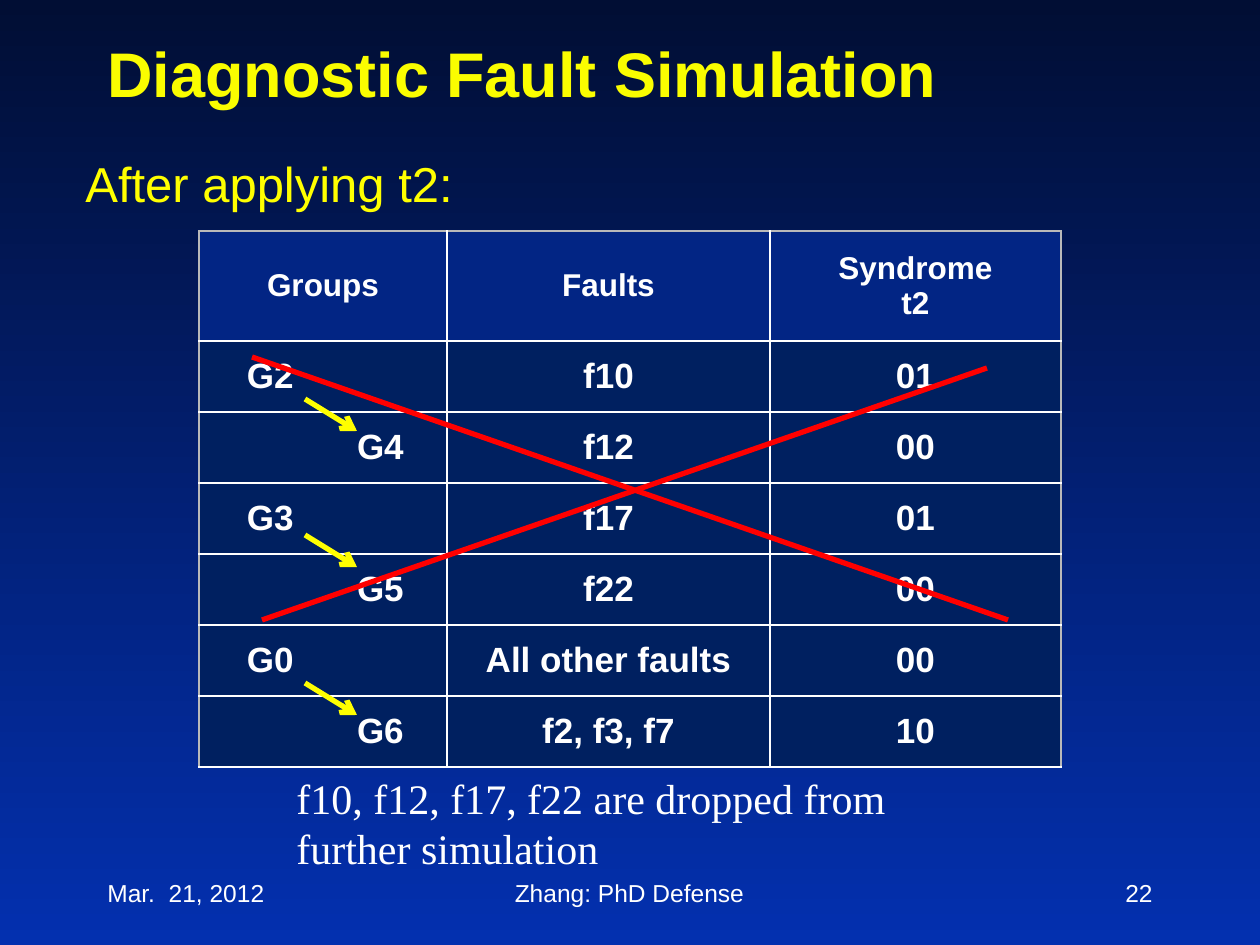
from lxml.etree import SubElement
from pptx import Presentation
from pptx.dml.color import RGBColor
from pptx.enum.shapes import MSO_CONNECTOR as Connector
from pptx.enum.text import MSO_ANCHOR as Anchor, PP_ALIGN as Align
from pptx.oxml.ns import qn
from pptx.util import Emu, Pt

NIGHT = RGBColor(0x01, 0x0E, 0x34)
ROYAL = RGBColor(0x03, 0x30, 0xAF)
HEADER = RGBColor(0x02, 0x25, 0x84)
NAVY = RGBColor(0x00, 0x20, 0x60)
TITLE = RGBColor(0xFA, 0xFD, 0x00)
YELLOW = RGBColor(0xFF, 0xFF, 0x00)
RED = RGBColor(0xFF, 0x00, 0x00)
WHITE = RGBColor(0xFF, 0xFF, 0xFF)
GREY = RGBColor(0xB9, 0xB9, 0xB9)

PX_PER_INCH = 126
GROUP_INDENTS = (48, 158)
ROWS = [
    ("Groups", "Faults", "Syndrome\nt2"),
    ("G2", "f10", "01"),
    ("G4", "f12", "00"),
    ("G3", "f17", "01"),
    ("G5", "f22", "00"),
    ("G0", "All other faults", "00"),
    ("G6", "f2, f3, f7", "10"),
]


def px(length):
    """Turn a length in px into EMU."""
    return Emu(round(length * 914400 / PX_PER_INCH))


class SlideBuilder:
    """Hold the style and the current slide, and add elements to it."""

    def __init__(self, slide, font="Arial", color=WHITE):
        self.slide = slide
        self.font = font
        self.color = color

    def background(self, top, bottom):
        fill = self.slide.background.fill
        fill.gradient()
        fill.gradient_angle = 270
        for stop, color, position in zip(fill.gradient_stops, (top, bottom), (0, 1)):
            stop.color.rgb = color
            stop.position = position

    def format(self, frame, size, color=None, font=None, bold=False, align=Align.LEFT):
        for paragraph in frame.paragraphs:
            paragraph.alignment = align
            for run in paragraph.runs:
                run.font.name = font or self.font
                run.font.size = Pt(size)
                run.font.bold = bold
                run.font.color.rgb = color or self.color

    def text(self, text, box, size, anchor=Anchor.TOP, **style):
        shape = self.slide.shapes.add_textbox(*map(px, box))
        frame = shape.text_frame
        frame.word_wrap = True
        frame.vertical_anchor = anchor
        frame.text = text
        self.format(frame, size, **style)

    def line(self, start, end, color, arrow=False):
        connector = self.slide.shapes.add_connector(
            Connector.STRAIGHT, *map(px, start + end))
        connector.line.color.rgb = color
        connector.line.width = Pt(3)
        if arrow:
            SubElement(connector.line._get_or_add_ln(), qn("a:tailEnd"), type="arrow")
        SubElement(connector._element.spPr, qn("a:effectLst"))

    def borders(self, cell, outer_sides):
        properties = cell._tc.get_or_add_tcPr()
        for index, side in enumerate("LRTB"):
            outer = side in outer_sides
            width = Pt(0.75) if outer else Pt(1)
            border = SubElement(properties, qn(f"a:ln{side}"), w=str(width))
            fill = SubElement(border, qn("a:solidFill"))
            SubElement(fill, qn("a:srgbClr"), val=str(GREY if outer else WHITE))
            properties.insert(index, border)

    def table(self, rows, position, widths, heights):
        box = (*position, sum(widths), sum(heights))
        table = self.slide.shapes.add_table(
            len(rows), len(widths), *map(px, box)).table
        for column, width in zip(table.columns, widths):
            column.width = px(width)
        for row, height in zip(table.rows, heights):
            row.height = px(height)
        last = len(widths) - 1
        for i, texts in enumerate(rows):
            for j, text in enumerate(texts):
                cell = table.cell(i, j)
                group = i > 0 and j == 0
                cell.text = text
                cell.vertical_anchor = Anchor.MIDDLE
                cell.margin_top = cell.margin_bottom = 0
                cell.margin_left = px(GROUP_INDENTS[(i - 1) % 2] if group else 9)
                cell.margin_right = px(9)
                cell.fill.solid()
                cell.fill.fore_color.rgb = NAVY if i else HEADER
                self.format(cell.text_frame, 20 if i else 18, bold=True,
                            align=Align.LEFT if group else Align.CENTER)
                outer = {"T": i == 0, "L": j == 0, "R": j == last}
                self.borders(cell, [side for side in outer if outer[side]])


def main():
    presentation = Presentation()
    presentation.slide_width = px(1260)
    presentation.slide_height = px(945)
    builder = SlideBuilder(presentation.slides.add_slide(presentation.slide_layouts[6]))
    builder.background(NIGHT, ROYAL)
    builder.text("Diagnostic Fault Simulation", (95, 32, 1071, 84), 36,
                 anchor=Anchor.BOTTOM, color=TITLE, bold=True)
    builder.text("After applying t2:", (73, 147, 662, 72), 28, color=YELLOW)
    builder.text("f10, f12, f17, f22 are dropped from further simulation",
                 (284, 766, 703, 115), 24, font="Times New Roman")
    builder.table(ROWS, (199, 231), (248, 323, 291), (110, *[71] * 6))
    for top in (399, 535, 683):
        builder.line((305, top), (357, top + 32), YELLOW, arrow=True)
    builder.line((252, 357), (1008, 620), RED)
    builder.line((262, 620), (987, 368), RED)
    for text, left, width, align in (
        ("Mar.  21, 2012", 95, 262, Align.LEFT),
        ("Zhang: PhD Defense", 430, 399, Align.CENTER),
        ("22", 903, 262, Align.RIGHT),
    ):
        builder.text(text, (left, 861, width, 63), 14, anchor=Anchor.MIDDLE, align=align)
    presentation.save("out.pptx")


if __name__ == "__main__":
    main()
